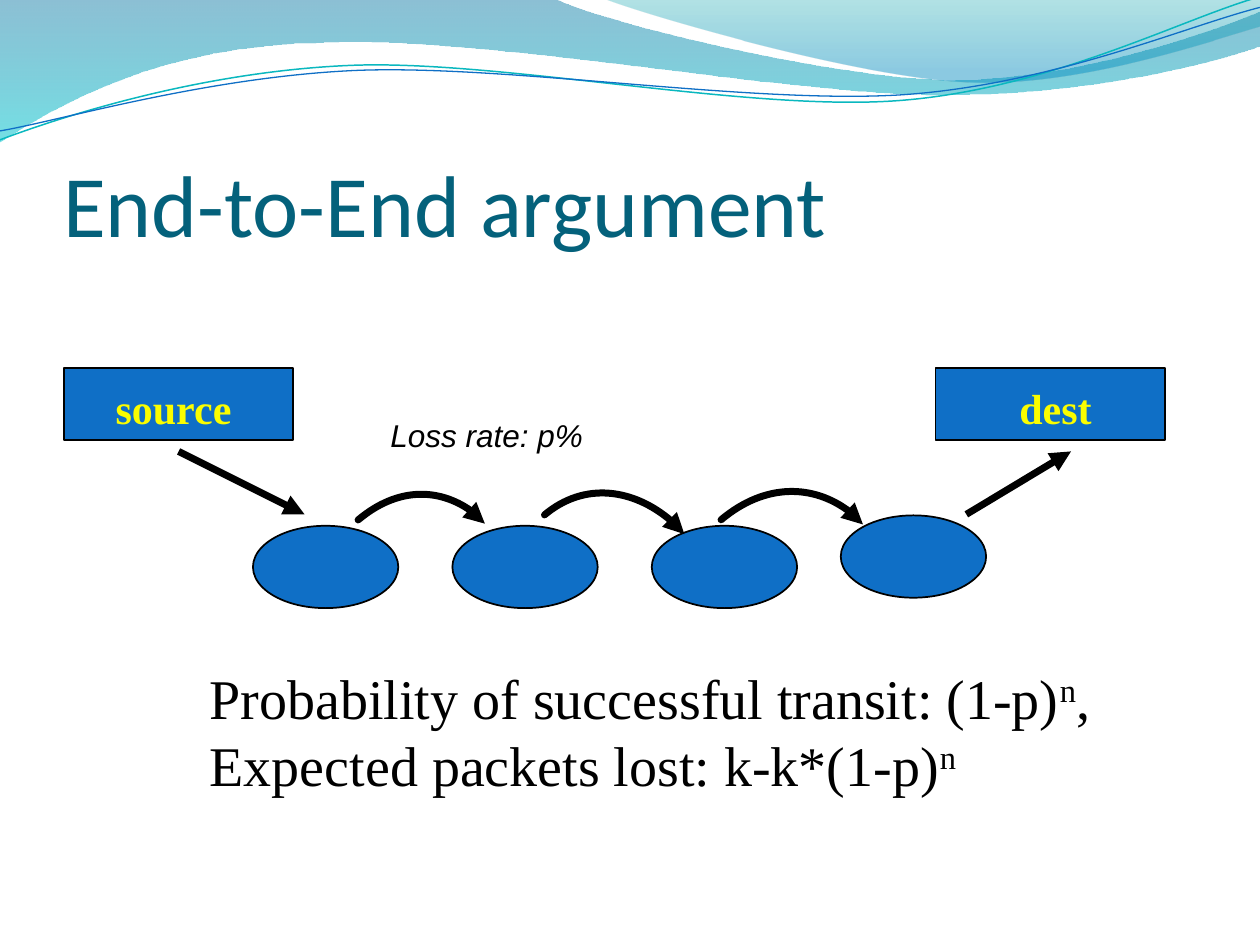
from lxml.etree import SubElement
from pptx import Presentation
from pptx.dml.color import RGBColor
from pptx.enum.shapes import MSO_CONNECTOR as Connector, MSO_SHAPE as Preset
from pptx.enum.text import MSO_ANCHOR as Anchor, MSO_AUTO_SIZE as AutoSize, PP_ALIGN as Align
from pptx.oxml.ns import qn
from pptx.util import Cm, Pt

# Content; all lengths are centimetres
TITLE = "End-to-End argument"
BLUE, BLACK, YELLOW, TEAL = "0F6FC6", "000000", "FAFD00", "04617B"
SERIF, SANS = "Times New Roman", "Arial"

# Outlines: a single point is a straight step, three points are a Bezier step
WAVES = [
    ([("0074A1", 45, 0), ("00C6CF", 55, 1)], (0, -0.03), [
        [(11.18, -0.03)],
        [(12.09, 0.43), (16.87, 1.6), (19.25, 1.6)],
        [(21.67, 1.6), (24.33, 0.66), (25.4, 0.23)],
        [(25.43, 0.91)],
        [(24.97, 1.12), (22.1, 1.93), (18.95, 1.91)],
        [(15.8, 1.91), (9.7, 0.71), (6.53, 0.86)],
        [(3.25, 0.89), (1.17, 2.11), (-0.03, 2.87)]]),
    ([("00A1A9", 30, 0), ("008BBF", 45, 0.8)], (12.17, -0.03), [
        [(12.93, 0.28), (17.32, 1.57), (19.53, 1.65)],
        [(21.74, 1.75), (24.41, 0.81), (25.4, 0.53)],
        [(25.4, 0)]]),
]
RIPPLES = [
    ("0AB8BF", 0.85, (0, 2.82), [
        [(1.22, 2.36), (4.01, 1.45), (7.04, 1.32)],
        [(10.03, 1.19), (15.06, 2.26), (18.11, 2.03)],
        [(21.16, 1.8), (23.83, 0.38), (25.35, -0.05)]]),
    (BLUE, 0.75, (0, 2.64), [
        [(1.19, 2.44), (4.17, 1.55), (7.19, 1.42)],
        [(10.24, 1.3), (15.16, 2.11), (18.21, 1.91)],
        [(21.23, 1.7), (23.9, 0.53), (25.4, 0.15)]]),
]

# Host name, box left, label left, label alignment
HOSTS = [("source", 1.29, 2.08, Align.LEFT), ("dest", 18.86, 19.86, Align.CENTER)]
ROUTERS = [(5.1 + 4.02 * i, 10.6) for i in range(3)] + [(16.95, 10.39)]
LINKS = [((3.6, 9.1), (6.14, 10.37)), ((19.48, 10.37), (21.59, 9.1))]
HOPS = [(7.54, 9.67, 1.91, 1.7), (11.43, 9.52, 1.91, 2.11), (14.9, 9.57, 2.13, 1.91)]
FORMULAS = [  # (text, superscript)
    [("Probability of successful transit: (1-p)", False), ("n", True), (",", False)],
    [("Expected packets lost: k-k*(1-p)", False), ("n", True)],
]

deck = Presentation()
deck.slide_width, deck.slide_height = Cm(25.4), Cm(19.05)
slide = deck.slides.add_slide(deck.slide_layouts[5])
shapes = slide.shapes


def rgb(code):
    return RGBColor.from_string(code)


def stroke(part, color, width):
    part.line.color.rgb = rgb(color)
    part.line.width = Pt(width)


def arrowhead(part):
    SubElement(part.line._get_or_add_ln(), qn("a:tailEnd"), type="triangle")


def outline(start, steps, close=False):
    """Draw a freeform, merging each group of three points into one Bezier."""
    builder = shapes.build_freeform(Cm(start[0]), Cm(start[1]))
    builder.add_line_segments([(Cm(x), Cm(y)) for step in steps for x, y in step],
                              close=close)
    part = builder.convert_to_shape()
    part.shadow.inherit = False
    segments = iter(list(part._element.spPr.iter(qn("a:lnTo"))))
    for step in steps:
        group = [next(segments) for _ in step]
        if len(group) == 3:
            group[0].tag = qn("a:cubicBezTo")
            for extra in group[1:]:
                extra.getparent().remove(extra)
                group[0].append(extra[0])
    if not close:
        part.fill.background()
    return part


def write(paragraph, text, size, font, color, bold=False, italic=False, raised=False):
    run = paragraph.add_run()
    run.text = text
    run.font.size, run.font.name = Pt(size), font
    run.font.bold, run.font.italic = bold, italic
    run.font.color.rgb = rgb(color)
    if raised:
        run._r.get_or_add_rPr().set("baseline", "30000")


def text_frame(box, wrap=True):
    frame = shapes.add_textbox(*map(Cm, box)).text_frame
    frame.word_wrap = wrap
    frame.auto_size = AutoSize.SHAPE_TO_FIT_TEXT
    return frame


def block(preset, box):
    part = shapes.add_shape(preset, *map(Cm, box))
    part.shadow.inherit = False
    part.fill.solid()
    part.fill.fore_color.rgb = rgb(BLUE)
    stroke(part, BLACK, 1)


# Wave decoration
for stops, start, steps in WAVES:
    wave = outline(start, steps, close=True)
    wave.line.fill.background()
    wave.fill.gradient()
    wave.fill.gradient_angle = 270
    for stop, (color, _, position) in zip(wave.fill.gradient_stops, stops):
        stop.color.rgb = rgb(color)
        stop.position = position
    for node, (_, opacity, _) in zip(wave._element.spPr.iter(qn("a:srgbClr")), stops):
        SubElement(node, qn("a:alpha"), val=str(opacity * 1000))
for color, width, start, steps in RIPPLES:
    stroke(outline(start, steps), color, width)

# Title
title = shapes.title
title.left, title.top, title.width, title.height = map(Cm, (1.27, 1.96, 22.86, 3.18))
heading = title.text_frame
heading.auto_size = AutoSize.NONE
heading.vertical_anchor = Anchor.BOTTOM
heading.margin_left = heading.margin_right = heading.margin_bottom = 0
heading.paragraphs[0].alignment = Align.LEFT
write(heading.paragraphs[0], TITLE, 50, "Calibri", TEAL)

# Hosts and routers
for name, left, label_left, alignment in HOSTS:
    block(Preset.RECTANGLE, (left, 7.42, 4.62, 1.45))
    label = text_frame((label_left, 7.58, 2.84, 1.27)).paragraphs[0]
    label.alignment = alignment
    write(label, name, 24, SERIF, YELLOW, bold=True)
for left, top in ROUTERS:
    block(Preset.OVAL, (left, top, 2.93, 1.66))

# Straight links between hosts and routers
for start, end in LINKS:
    link = shapes.add_connector(Connector.STRAIGHT, *map(Cm, start + end))
    stroke(link, BLACK, 4)
    arrowhead(link)
    SubElement(link._element.spPr, qn("a:effectLst"))

# Hops between routers: quarter ellipses turned upright
KAPPA = 0.55
for left, top, width, height in HOPS:
    right, bottom = left + width, top + height
    hop = outline((right, bottom), [[(right - KAPPA * width, bottom),
                                     (left, top + KAPPA * height), (left, top)]])
    hop.rotation = 140
    stroke(hop, BLACK, 4)
    hop.line._get_or_add_ln().set("cap", "rnd")
    arrowhead(hop)

# Formulas and loss rate
formulas = text_frame((3.98, 13.25, 18.26, 2.95), wrap=False)
for i, pieces in enumerate(FORMULAS):
    formula = formulas.add_paragraph() if i else formulas.paragraphs[0]
    for text, raised in pieces:
        write(formula, text, 32, SERIF, BLACK, raised=raised)
loss_rate = text_frame((7.62, 8.26, 5.72, 1.02)).paragraphs[0]
write(loss_rate, "Loss rate: p%", 18, SANS, BLACK, italic=True)

deck.save("out.pptx")
